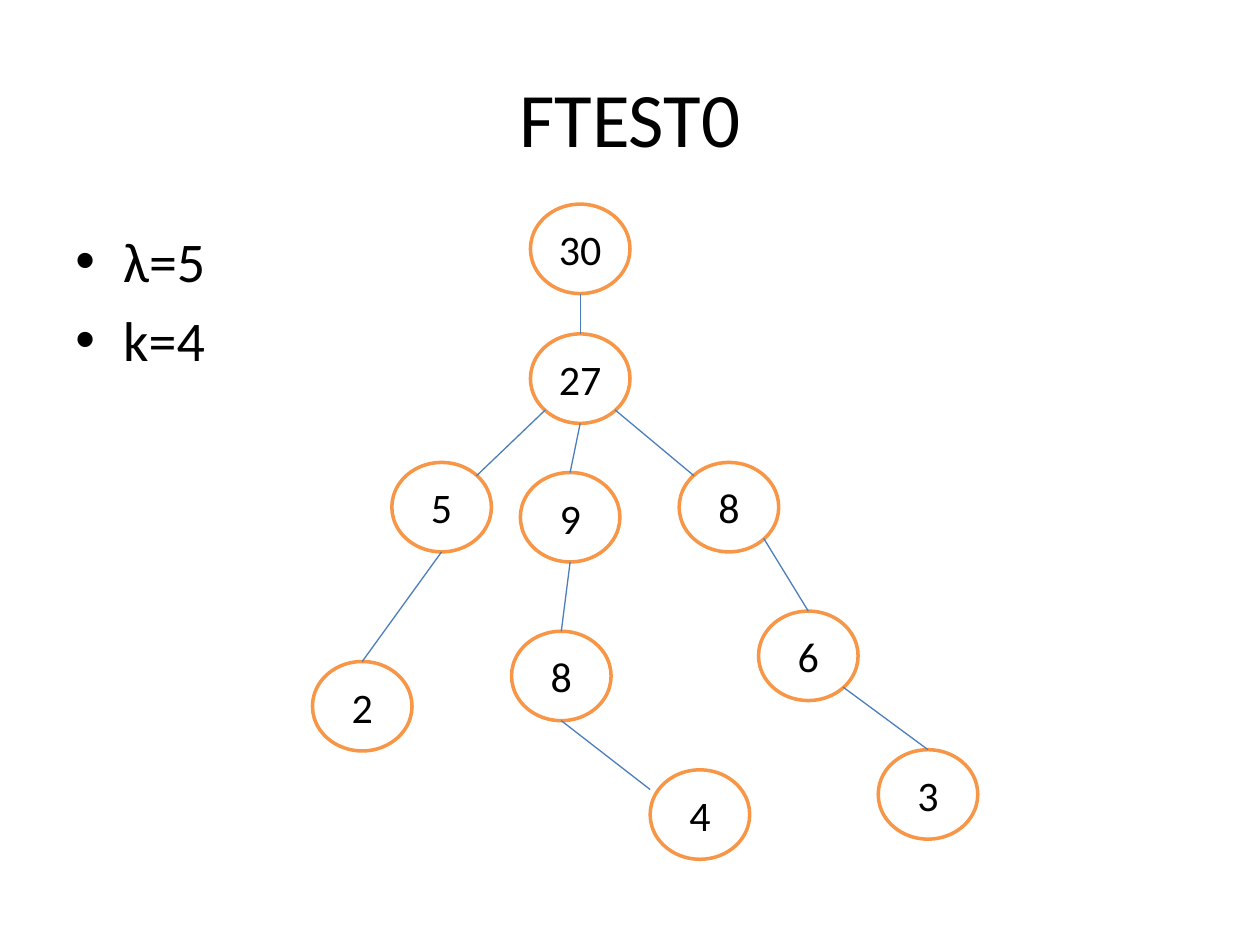
import pptx
import pptx.dml.color
import pptx.enum.shapes
import pptx.enum.text
import pptx.oxml
import pptx.util

Inches = pptx.util.Inches
Pt = pptx.util.Pt
PP_ALIGN = pptx.enum.text.PP_ALIGN
MIDDLE = pptx.enum.text.MSO_ANCHOR.MIDDLE

# Content
TITLE = "FTEST0"
BULLETS = ["λ=5", "k=4"]

# Tree nodes: name -> (label, left, top)
NODES = {
    "root": ("30", 4.21, 1.62),
    "hub": ("27", 4.21, 2.65),
    "left": ("5", 3.11, 3.67),
    "middle": ("9", 4.13, 3.75),
    "right": ("8", 5.39, 3.67),
    "left leaf": ("2", 2.48, 5.25),
    "middle child": ("8", 4.06, 5.01),
    "middle leaf": ("4", 5.16, 6.11),
    "right child": ("6", 6.02, 4.85),
    "right leaf": ("3", 6.97, 5.95),
}
NODE_WIDTH, NODE_HEIGHT = 0.79, 0.71

# Points on a node, as fractions of its width and height
ANCHORS = {
    "top": (0.5, 0),
    "bottom": (0.5, 1),
    "top left": (0.15, 0.15),
    "top right": (0.85, 0.15),
    "bottom left": (0.15, 0.85),
    "bottom right": (0.85, 0.85),
    "upper left side": (0, 0.22),
}

# Branches: parent, its anchor, child, its anchor
BRANCHES = [
    ("root", "bottom", "hub", "top"),
    ("hub", "bottom left", "left", "top right"),
    ("hub", "bottom", "middle", "top"),
    ("hub", "bottom right", "right", "top left"),
    ("left", "bottom", "left leaf", "top"),
    ("middle", "bottom", "middle child", "top"),
    ("middle child", "bottom", "middle leaf", "upper left side"),
    ("right", "bottom right", "right child", "top"),
    ("right child", "bottom right", "right leaf", "top"),
]


def color(value):
    return pptx.dml.color.RGBColor.from_string(value)


def write(paragraph, text, size, alignment):
    paragraph.alignment = alignment
    run = paragraph.add_run()
    run.text = text
    run.font.name = "Calibri"
    run.font.size = Pt(size)
    run.font.color.rgb = color("000000")


def add_text_frame(slide, left, top, width, height):
    box = slide.shapes.add_textbox(Inches(left), Inches(top), Inches(width), Inches(height))
    box.text_frame.word_wrap = True
    return box.text_frame


def add_bullet(paragraph):
    properties = paragraph._p.get_or_add_pPr()
    properties.set("marL", str(Inches(0.38)))
    properties.set("indent", str(-Inches(0.38)))
    namespace = pptx.oxml.ns.nsdecls("a")
    for tag in ('buFont typeface="Arial"', 'buChar char="•"'):
        properties.append(pptx.oxml.parse_xml(f"<a:{tag} {namespace}/>"))


def add_node(slide, label, left, top):
    shape = slide.shapes.add_shape(
        pptx.enum.shapes.MSO_SHAPE.OVAL,
        Inches(left), Inches(top), Inches(NODE_WIDTH), Inches(NODE_HEIGHT))
    shape.shadow.inherit = False
    shape.fill.solid()
    shape.fill.fore_color.rgb = color("FFFFFF")
    shape.line.color.rgb = color("F79646")
    shape.line.width = Pt(2)
    shape.text_frame.vertical_anchor = MIDDLE
    write(shape.text_frame.paragraphs[0], label, 24, PP_ALIGN.CENTER)


def anchor_point(node, anchor):
    _, left, top = NODES[node]
    across, down = ANCHORS[anchor]
    return Inches(left + across * NODE_WIDTH), Inches(top + down * NODE_HEIGHT)


def add_branch(slide, parent, parent_anchor, child, child_anchor):
    connector = slide.shapes.add_connector(
        pptx.enum.shapes.MSO_CONNECTOR.STRAIGHT,
        *anchor_point(parent, parent_anchor), *anchor_point(child, child_anchor))
    connector.line.color.rgb = color("4B7EBC")
    connector.line.width = Pt(0.75)
    no_effects = f"<a:effectLst {pptx.oxml.ns.nsdecls('a')}/>"
    connector._element.spPr.append(pptx.oxml.parse_xml(no_effects))


def main():
    presentation = pptx.Presentation()
    presentation.slide_width = Inches(10)
    presentation.slide_height = Inches(7.5)
    slide = presentation.slides.add_slide(presentation.slide_layouts[6])

    # Title
    title = add_text_frame(slide, 0.5, 0.3, 9, 1.25)
    title.vertical_anchor = MIDDLE
    write(title.paragraphs[0], TITLE, 44, PP_ALIGN.CENTER)

    # Parameters
    body = add_text_frame(slide, 0.5, 1.75, 9, 4.95)
    for index, text in enumerate(BULLETS):
        paragraph = body.add_paragraph() if index else body.paragraphs[0]
        paragraph.space_before = Pt(6.4)
        add_bullet(paragraph)
        write(paragraph, text, 32, PP_ALIGN.LEFT)

    # Tree
    for node in NODES.values():
        add_node(slide, *node)
    for branch in BRANCHES:
        add_branch(slide, *branch)

    presentation.save("out.pptx")


if __name__ == "__main__":
    main()
